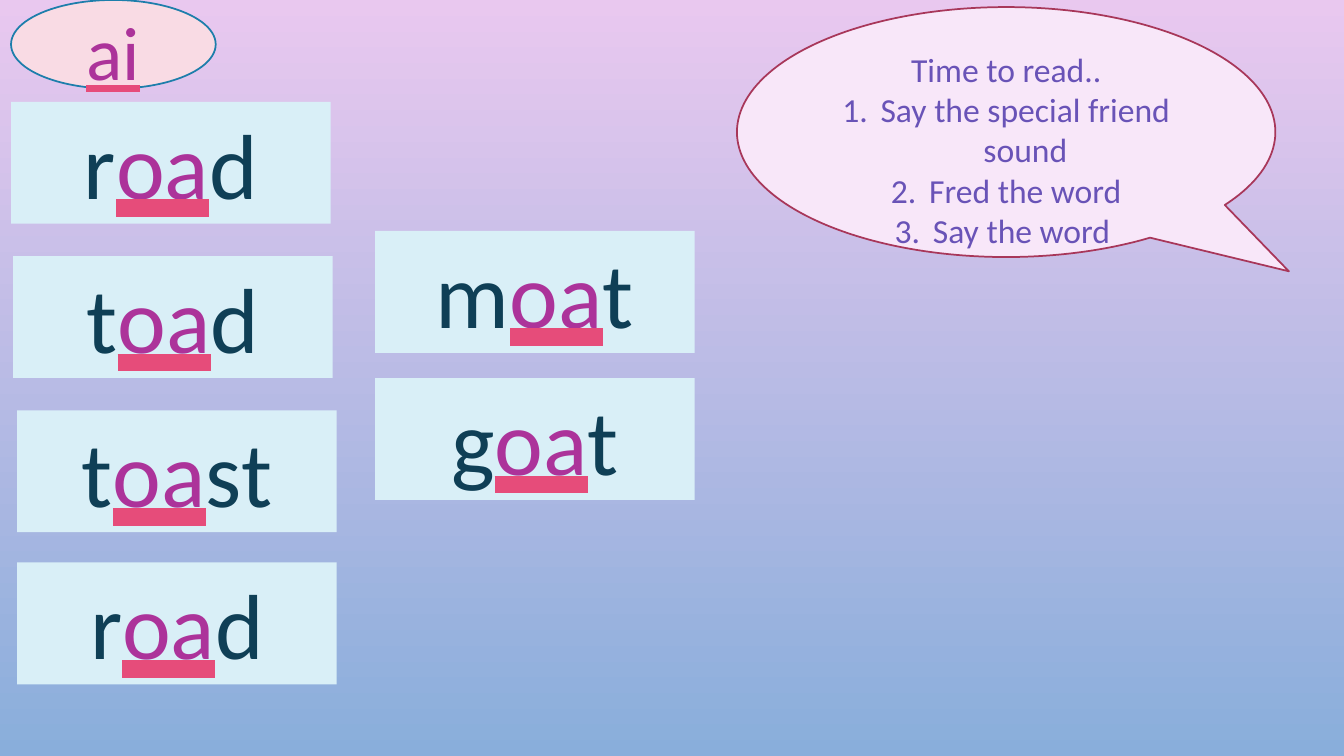
import pptx
import pptx.util
import pptx.dml.color
import pptx.enum.shapes
import pptx.enum.text
import pptx.oxml
import pptx.oxml.ns

Inches = pptx.util.Inches
Pt = pptx.util.Pt
RGBColor = pptx.dml.color.RGBColor
SHAPE = pptx.enum.shapes.MSO_SHAPE
TEXT = pptx.enum.text

PINK = RGBColor(0xE9, 0xC8, 0xEF)
BLUE = RGBColor(0x89, 0xAE, 0xDB)
BLUSH = RGBColor(0xF9, 0xDB, 0xE4)
TEAL = RGBColor(0x1D, 0x7E, 0xAB)
PLUM = RGBColor(0xAC, 0x33, 0x9A)
ICE = RGBColor(0xD9, 0xEF, 0xF7)
NAVY = RGBColor(0x0F, 0x3F, 0x56)
LILAC = RGBColor(0xF8, 0xE7, 0xF9)
WINE = RGBColor(0xA8, 0x37, 0x5A)
VIOLET = RGBColor(0x69, 0x53, 0xB7)
ROSE = RGBColor(0xE6, 0x4C, 0x7A)


def add_form(shapes, kind, box, fill, edge=None):
    form = shapes.add_shape(kind, *map(Inches, box))
    form.shadow.inherit = False
    form.fill.solid()
    form.fill.fore_color.rgb = fill
    if edge is None:
        form.line.fill.background()
    else:
        form.line.color.rgb = edge
        form.line.width = Pt(1.25)
    form.text_frame.word_wrap = True
    form.text_frame.vertical_anchor = TEXT.MSO_ANCHOR.TOP
    return form


def style_run(run, size, color, under=None):
    """Set the font of a run; an underline is always rose."""
    font = run.font
    font.size = Pt(size)
    font.color.rgb = color
    if under is not None:
        font.underline = under
        font._element.append(pptx.oxml.parse_xml(
            f'<a:uFill {pptx.oxml.ns.nsdecls("a")}><a:solidFill>'
            f'<a:srgbClr val="{ROSE}"/></a:solidFill></a:uFill>'))
    font.name = "Calibri"


deck = pptx.Presentation()
deck.slide_width = Inches(13.33)
deck.slide_height = Inches(7.5)
slide = deck.slides.add_slide(deck.slide_layouts[6])

back = slide.background.fill
back.gradient()
back.gradient_angle = 270
for stop, color, place in zip(back.gradient_stops, (PINK, BLUE), (0, 1)):
    stop.color.rgb = color
    stop.position = place

# Sound badge
badge = slide.shapes.add_group_shape()
add_form(badge.shapes, SHAPE.OVAL, (0.11, 0, 2.03, 0.88), BLUSH, TEAL)
label = badge.shapes.add_textbox(0, 0, Inches(2.24), Inches(1.01))
label.text_frame.word_wrap = True
para = label.text_frame.paragraphs[0]
para.text = "ai"
para.alignment = TEXT.PP_ALIGN.CENTER
style_run(para.runs[0], 54, PLUM, TEXT.MSO_UNDERLINE.SINGLE_LINE)

# Word cards: letters before and after the sound, left, top
cards = [
    ("r", "d", 0.11, 1.01),
    ("t", "d", 0.13, 2.54),
    ("t", "st", 0.17, 4.07),
    ("r", "d", 0.17, 5.58),
    ("m", "t", 3.72, 2.29),
    ("g", "t", 3.72, 3.75),
]
for start, end, left, top in cards:
    card = add_form(slide.shapes, SHAPE.RECTANGLE, (left, top, 3.17, 1.21), ICE)
    para = card.text_frame.paragraphs[0]
    para.alignment = TEXT.PP_ALIGN.CENTER
    for part in (start, "oa", end):
        run = para.add_run()
        run.text = part
        if part == "oa":
            style_run(run, 66, PLUM, TEXT.MSO_UNDERLINE.HEAVY_LINE)
        else:
            style_run(run, 66, NAVY)

# Reading steps
bubble = add_form(slide.shapes, SHAPE.OVAL_CALLOUT, (7.31, 0.07, 5.34, 2.48),
                  LILAC, WINE)
bubble.adjustments[0] = 0.525
bubble.adjustments[1] = 0.557
frame = bubble.text_frame
frame.text = ("Time to read..\nSay the special friend sound\n"
              "Fred the word\nSay the word ")
for step, para in enumerate(frame.paragraphs):
    para.alignment = TEXT.PP_ALIGN.CENTER
    if step > 0:
        props = para._p.get_or_add_pPr()
        props.set("marL", str(Inches(0.38)))
        props.set("indent", str(Inches(-0.38)))
        props.append(pptx.oxml.parse_xml(
            f'<a:buFont {pptx.oxml.ns.nsdecls("a")} typeface="+mj-lt"/>'))
        props.append(pptx.oxml.parse_xml(
            f'<a:buAutoNum {pptx.oxml.ns.nsdecls("a")} type="arabicPeriod"/>'))
    style_run(para.runs[0], 24, VIOLET)

deck.save("out.pptx")
